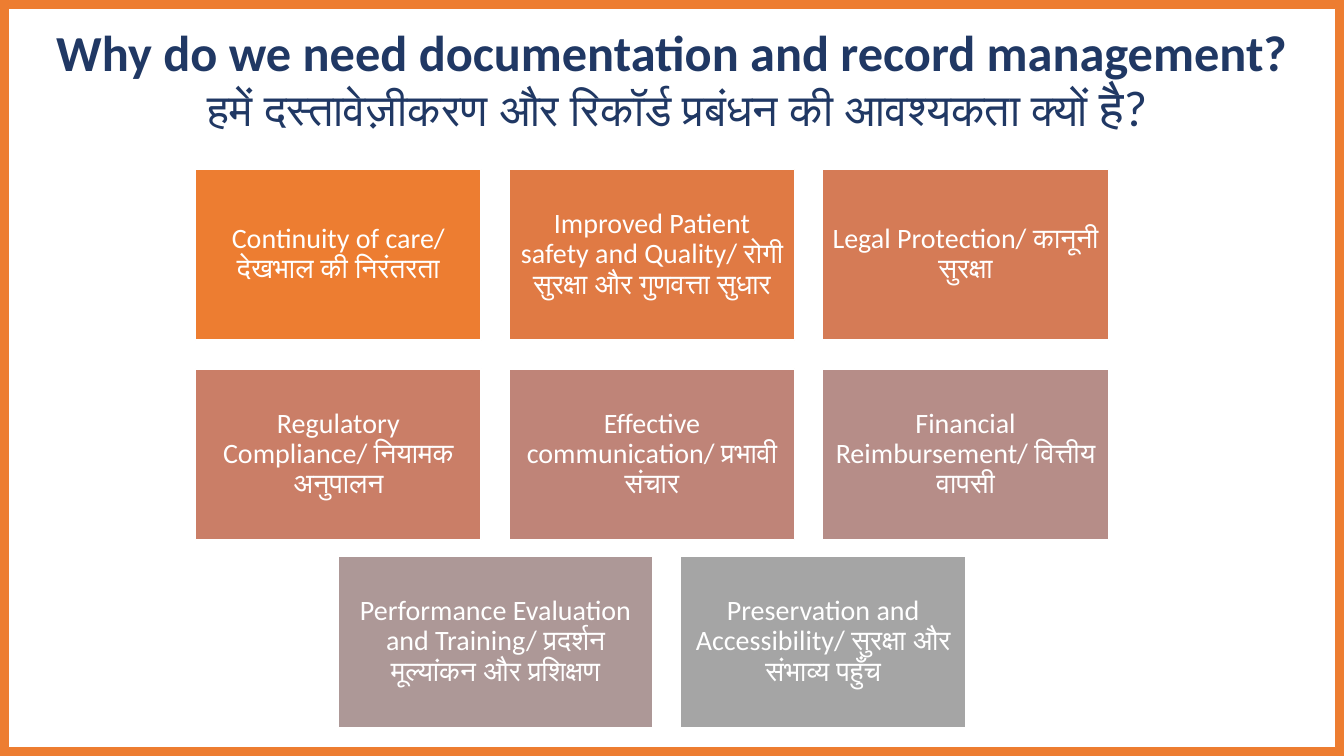
import pptx
import pptx.dml.color
import pptx.enum.shapes
import pptx.enum.text
import pptx.util

Pt = pptx.util.Pt
RGBColor = pptx.dml.color.RGBColor

ORANGE = RGBColor(0xED, 0x7D, 0x31)
NAVY = RGBColor(0x20, 0x38, 0x64)
WHITE = RGBColor(0xFF, 0xFF, 0xFF)

FONT = "Calibri"
SLIDE_WIDTH, SLIDE_HEIGHT = 960, 540
BORDER = 6
CARD_WIDTH, CARD_HEIGHT, CARD_GAP = 204, 122, 20

# Each title line holds runs of text, size and bold
TITLE_LINES = [
    [("Why do we need documentation and record management?", 36, True)],
    [(" हमें दस्तावेज़ीकरण और रिकॉर्ड प्रबंधन की आवश्यकता क्यों ", 32, False),
     ("है?", 36, False)],
]

# Each row: left, top, then cards of text, fill and width
REASON_ROWS = [
    (139.7, 121, [
        ("Continuity of care/ देखभाल की निरंतरता", ORANGE, CARD_WIDTH),
        ("Improved Patient safety and Quality/ रोगी सुरक्षा और गुणवत्ता सुधार",
         RGBColor(0xE0, 0x7A, 0x44), CARD_WIDTH),
        ("Legal Protection/ कानूनी सुरक्षा",
         RGBColor(0xD5, 0x7B, 0x56), CARD_WIDTH),
    ]),
    (139.7, 263.5, [
        ("Regulatory Compliance/ नियामक अनुपालन",
         RGBColor(0xCA, 0x7E, 0x67), CARD_WIDTH),
        ("Effective communication/ प्रभावी संचार",
         RGBColor(0xBF, 0x84, 0x78), CARD_WIDTH),
        ("Financial Reimbursement/ वित्तीय वापसी",
         RGBColor(0xB6, 0x8D, 0x88), CARD_WIDTH),
    ]),
    (242, 397.5, [
        ("Performance Evaluation and Training/ प्रदर्शन मूल्यांकन और प्रशिक्षण",
         RGBColor(0xAD, 0x98, 0x97), 224),
        ("Preservation and Accessibility/ सुरक्षा और संभाव्य पहुँच",
         RGBColor(0xA5, 0xA5, 0xA5), CARD_WIDTH),
    ]),
]


def add_run(paragraph, text, size, color, bold=False):
    run = paragraph.add_run()
    run.text = text
    run.font.name = FONT
    run.font.size = Pt(size)
    run.font.bold = bold
    run.font.color.rgb = color


def center(paragraph):
    paragraph.alignment = pptx.enum.text.PP_ALIGN.CENTER
    paragraph.line_spacing = 0.9


def add_box(slide, kind, left, top, width, height, fill, line):
    shape = slide.shapes.add_shape(
        kind, Pt(left), Pt(top), Pt(width), Pt(height))
    shape.shadow.inherit = False
    shape.fill.solid()
    shape.fill.fore_color.rgb = fill
    shape.line.color.rgb = line
    shape.line.width = Pt(1)
    return shape


def add_border(slide, left, top, width, height):
    frame = add_box(slide, pptx.enum.shapes.MSO_SHAPE.FRAME,
                    left, top, width, height, ORANGE, ORANGE)
    frame.adjustments[0] = BORDER / min(width, height)


def fill_title(slide, left, top, width, height):
    title = slide.shapes.title
    title.left, title.top = Pt(left), Pt(top)
    title.width, title.height = Pt(width), Pt(height)
    text_frame = title.text_frame
    text_frame.word_wrap = True
    text_frame.auto_size = pptx.enum.text.MSO_AUTO_SIZE.NONE
    text_frame.vertical_anchor = pptx.enum.text.MSO_ANCHOR.TOP
    for index, runs in enumerate(TITLE_LINES):
        paragraph = (text_frame.add_paragraph() if index
                     else text_frame.paragraphs[0])
        center(paragraph)
        paragraph.space_before = Pt(0)
        for text, size, bold in runs:
            add_run(paragraph, text, size, NAVY, bold)


def add_card(slide, left, top, width, height, text, fill):
    card = add_box(slide, pptx.enum.shapes.MSO_SHAPE.RECTANGLE,
                   left, top, width, height, fill, WHITE)
    text_frame = card.text_frame
    text_frame.word_wrap = True
    text_frame.vertical_anchor = pptx.enum.text.MSO_ANCHOR.MIDDLE
    text_frame.margin_left = text_frame.margin_right = Pt(6)
    text_frame.margin_top = text_frame.margin_bottom = Pt(6)
    paragraph = text_frame.paragraphs[0]
    center(paragraph)
    add_run(paragraph, text, 20, WHITE)


def add_card_row(slide, left, top, cards):
    for text, fill, width in cards:
        add_card(slide, left, top, width, CARD_HEIGHT, text, fill)
        left += width + CARD_GAP


def main():
    presentation = pptx.Presentation()
    presentation.slide_width = Pt(SLIDE_WIDTH)
    presentation.slide_height = Pt(SLIDE_HEIGHT)
    slide = presentation.slides.add_slide(presentation.slide_layouts[5])

    # Orange border around the slide
    add_border(slide, 0, 0, SLIDE_WIDTH, SLIDE_HEIGHT)

    # Title in two languages
    fill_title(slide, 15, 16.5, 930, 104.5)

    # Cards with the reasons
    for left, top, cards in REASON_ROWS:
        add_card_row(slide, left, top, cards)

    presentation.save("out.pptx")


if __name__ == "__main__":
    main()
